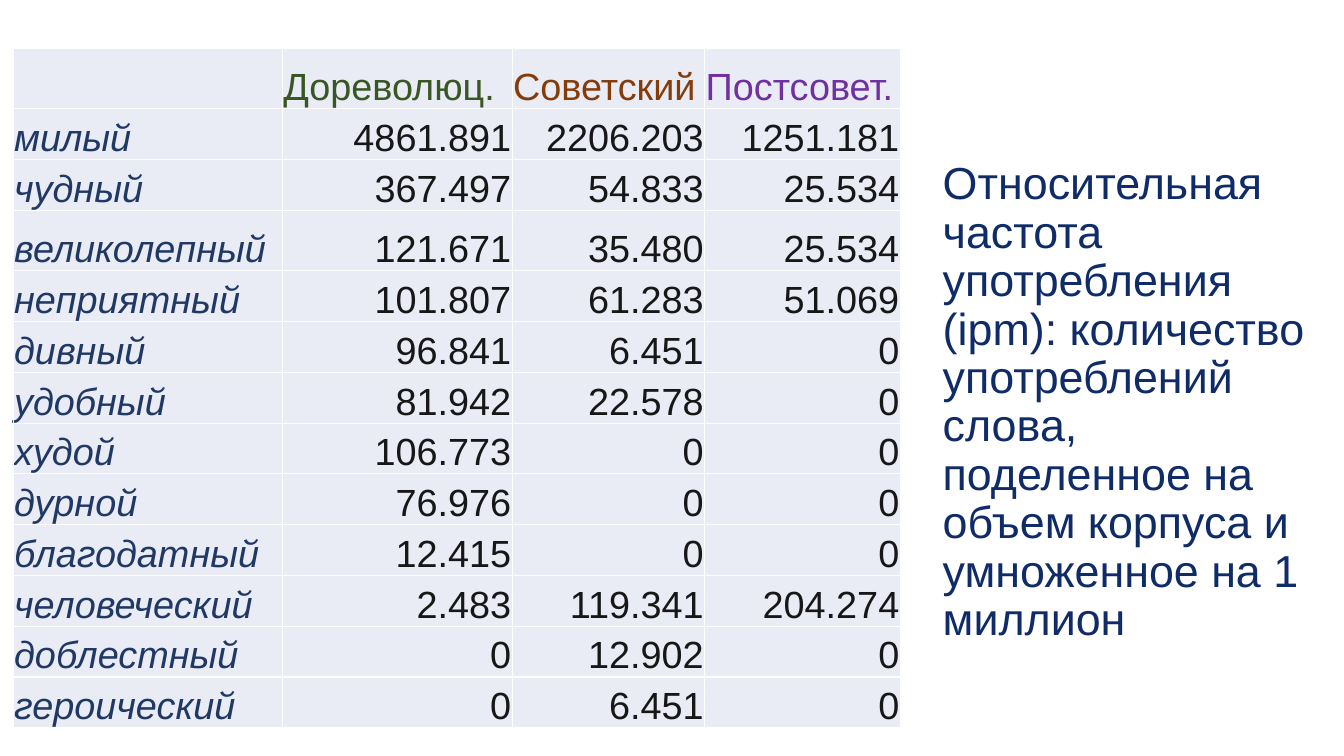
from dataclasses import dataclass

from lxml.etree import SubElement as Sub
from pptx import Presentation
from pptx.dml.color import RGBColor as RGB
from pptx.enum.text import MSO_ANCHOR as Anchor
from pptx.enum.text import MSO_AUTO_SIZE as Auto
from pptx.enum.text import PP_ALIGN as Align
from pptx.oxml.ns import qn
from pptx.util import Inches, Pt


@dataclass(frozen=True)
class Theme:
    face: str = "Arial"
    title: str = "0F2C68"
    word: str = "203864"
    value: str = "181717"
    fill: str = "E9EBF5"
    line: str = "FFFFFF"
    heads: tuple = ("385723", "843C0B", "7030A0")
    big: int = 32
    body: int = 27


THEME = Theme()

TITLE = ("Относительная частота употребления (ipm): количество употреблений "
         "слова, поделенное на объем корпуса и умноженное на 1 миллион")
HEADS = ("", "Дореволюц.", "Советский", "Постсовет.")
WORDS = (
    ("милый", "4861.891", "2206.203", "1251.181"),
    ("чудный", "367.497", "54.833", "25.534"),
    ("великолепный", "121.671", "35.480", "25.534"),
    ("неприятный", "101.807", "61.283", "51.069"),
    ("дивный", "96.841", "6.451", "0"),
    ("удобный", "81.942", "22.578", "0"),
    ("худой", "106.773", "0", "0"),
    ("дурной", "76.976", "0", "0"),
    ("благодатный", "12.415", "0", "0"),
    ("человеческий", "2.483", "119.341", "204.274"),
    ("доблестный", "0", "12.902", "0"),
    ("героический", "0", "6.451", "0"),
)
WIDTHS = (2.67, 2.28, 1.91, 1.94)
HEIGHT = 6.74
TALL = {0: 0.6, 3: 0.6}  # row number: height; the others share the rest


def assign(obj, **form):
    for name, value in form.items():
        setattr(obj, name, value)


def write(frame, text, size, color, align=Align.LEFT, italic=False):
    para = frame.paragraphs[0]
    para.alignment = align
    run = para.add_run()
    run.text = text
    assign(run.font, name=THEME.face, size=Pt(size), italic=italic)
    run.font.color.rgb = RGB.from_string(color)
    return para


def add_title(slide):
    title = slide.shapes.title
    assign(title, left=Inches(9.25), top=Inches(3.57),
           width=Inches(3.84), height=Inches(0.86))
    frame = title.text_frame
    assign(frame, word_wrap=True, auto_size=Auto.NONE,
           vertical_anchor=Anchor.MIDDLE)
    para = write(frame, TITLE, THEME.big, THEME.title)
    para.line_spacing = 0.9


def paint(cell):
    # Borders come before the fill in the cell properties
    props = cell._tc.get_or_add_tcPr()
    for side in ("lnL", "lnR", "lnT", "lnB"):
        line = Sub(props, qn(f"a:{side}"), w=str(Pt(1)))
        solid = Sub(line, qn("a:solidFill"))
        Sub(solid, qn("a:srgbClr"), val=THEME.line)
    cell.fill.solid()
    cell.fill.fore_color.rgb = RGB.from_string(THEME.fill)
    assign(cell, vertical_anchor=Anchor.BOTTOM, margin_left=Inches(0.01),
           margin_right=Inches(0.01), margin_top=Inches(0.01),
           margin_bottom=0)


def style(row, col):
    if row == 0:
        return {"color": THEME.heads[col - 1]}
    if col == 0:
        return {"color": THEME.word, "italic": True}
    return {"color": THEME.value, "align": Align.RIGHT}


def add_grid(slide):
    rows = (HEADS, *WORDS)
    table = slide.shapes.add_table(
        len(rows), len(HEADS), Inches(0.13), Inches(0.48),
        Inches(sum(WIDTHS)), Inches(HEIGHT)).table
    assign(table, first_row=False, horz_banding=False)

    # Column widths and row heights
    for col, width in zip(table.columns, WIDTHS):
        col.width = Inches(width)
    rest = (HEIGHT - sum(TALL.values())) / (len(rows) - len(TALL))
    for num, row in enumerate(table.rows):
        row.height = Inches(TALL.get(num, rest))

    # Cells
    for r, texts in enumerate(rows):
        for c, text in enumerate(texts):
            cell = table.cell(r, c)
            paint(cell)
            if text:
                write(cell.text_frame, text, THEME.body, **style(r, c))


def main():
    deck = Presentation()
    assign(deck, slide_width=Inches(13.33), slide_height=Inches(7.5))
    slide = deck.slides.add_slide(deck.slide_layouts.get_by_name("Title Only"))
    add_title(slide)
    add_grid(slide)
    deck.save("out.pptx")


if __name__ == "__main__":
    main()
